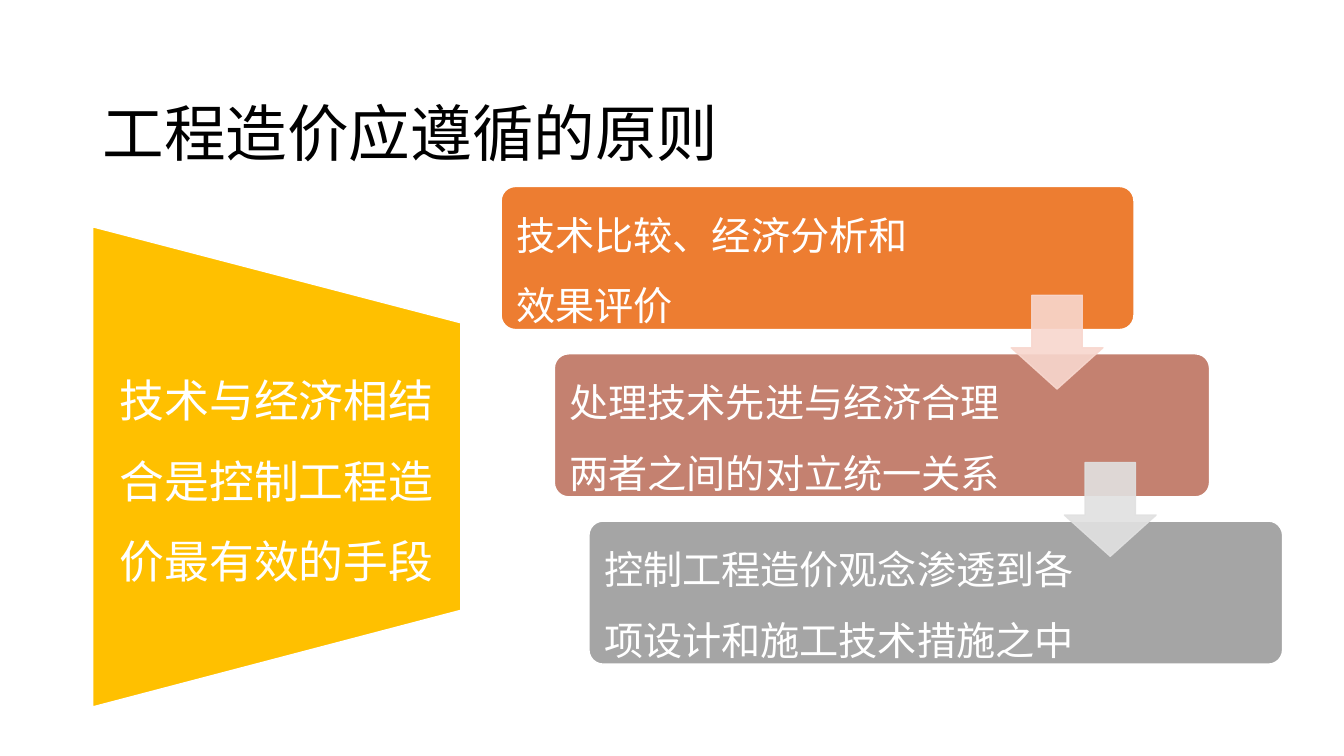
from lxml import etree
from pptx import Presentation
from pptx.dml.color import RGBColor
from pptx.enum import shapes, text
from pptx.oxml.ns import qn
from pptx.util import Pt

# Content
TITLE = "工程造价应遵循的原则"
METHOD = "技术与经济相结合是控制工程造价最有效的手段"
STEPS = [  # wording, left, width, fill
    ("技术比较、经济分析和效果评价", 358, 452, "orange"),
    ("处理技术先进与经济合理两者之间的对立统一关系", 396, 468, "clay"),
    ("控制工程造价观念渗透到各项设计和施工技术措施之中", 420.7, 495.5, "grey"),
]
ARROW_FILLS = ["pink", "silver"]
COLOURS = {"black": "000000", "white": "FFFFFF", "gold": "FFC000",
           "orange": "ED7D31", "clay": "C48170", "grey": "A5A5A5",
           "pink": "F8D7CE", "silver": "E1E1E1"}
BODY_FONT, TITLE_FONT = "Noto Sans CJK JP", "Times New Roman"

# Layout, in points
STEP_TOP, STEP_HEIGHT, STEP_PITCH = 133.2, 102.2, 119.5
ARROW_OFFSET, ARROW_SIZE = (364.3, 77.7), (65.5, 67)
TRAPEZOID = [(66.2, 505), (66.2, 162), (329.2, 230.6), (329.2, 436)]


def colour(name):
    return RGBColor.from_string(COLOURS[name])


def paint(shape, fill, line, opacity=None):
    shape.shadow.inherit = False
    shape.fill.solid()
    shape.fill.fore_color.rgb = colour(fill)
    shape.line.color.rgb = colour(line)
    shape.line.width = Pt(1)
    if opacity:
        for tint in shape._element.spPr.iter(qn("a:srgbClr")):
            etree.SubElement(tint, qn("a:alpha"), val=str(opacity * 1000))


def write(shape, wording, size, align, font, ink, margins):
    frame = shape.text_frame
    frame.word_wrap = True
    frame.auto_size = text.MSO_AUTO_SIZE.NONE
    frame.vertical_anchor = text.MSO_ANCHOR.MIDDLE
    for side, margin in zip(("left", "top", "right", "bottom"), margins):
        setattr(frame, "margin_" + side, Pt(margin))
    para = frame.paragraphs[0]
    para.alignment, para.line_spacing = align, 1.5
    span = para.add_run()
    span.text = wording
    for name, value in {"size": Pt(size), "name": font, "bold": False}.items():
        setattr(span.font, name, value)
    span.font.color.rgb = colour(ink)
    etree.SubElement(span._r.get_or_add_rPr(), qn("a:ea"), typeface=BODY_FONT)


deck = Presentation()
deck.slide_width, deck.slide_height = Pt(960), Pt(540)
page = deck.slides.add_slide(deck.slide_layouts[5])

# Title
title = page.shapes.title
title.left, title.top, title.width, title.height = map(Pt, (66, 28.8, 828, 104.4))
write(title, TITLE, 44, text.PP_ALIGN.LEFT, TITLE_FONT, "black", (7.2, 3.6, 7.2, 3.6))

# Trapezoid with the main method
corners = [(Pt(x), Pt(y)) for x, y in TRAPEZOID]
builder = page.shapes.build_freeform(*corners[0])
builder.add_line_segments(corners[1:], close=True)
method = builder.convert_to_shape()
paint(method, "gold", "white")
write(method, METHOD, 32, text.PP_ALIGN.CENTER, BODY_FONT, "white", (16, 68.5, 16, 68.5))

# Staggered steps
for index, (wording, left, width, fill) in enumerate(STEPS):
    top = STEP_TOP + index * STEP_PITCH
    step = page.shapes.add_shape(shapes.MSO_SHAPE.ROUNDED_RECTANGLE,
                                 Pt(left), Pt(top), Pt(width), Pt(STEP_HEIGHT))
    step.adjustments[0] = 0.1
    paint(step, fill, "white")
    write(step, wording, 28, text.PP_ALIGN.LEFT, BODY_FONT, "white", (7.8, 7.8, 138.8, 7.8))

# Arrows from each step to the next
for index, fill in enumerate(ARROW_FILLS):
    left = STEPS[index][1] + ARROW_OFFSET[0]
    top = STEP_TOP + index * STEP_PITCH + ARROW_OFFSET[1]
    arrow = page.shapes.add_shape(shapes.MSO_SHAPE.DOWN_ARROW,
                                  Pt(left), Pt(top), *map(Pt, ARROW_SIZE))
    arrow.adjustments[0], arrow.adjustments[1] = 0.55, 0.45
    paint(arrow, fill, fill, opacity=90)

deck.save("out.pptx")
